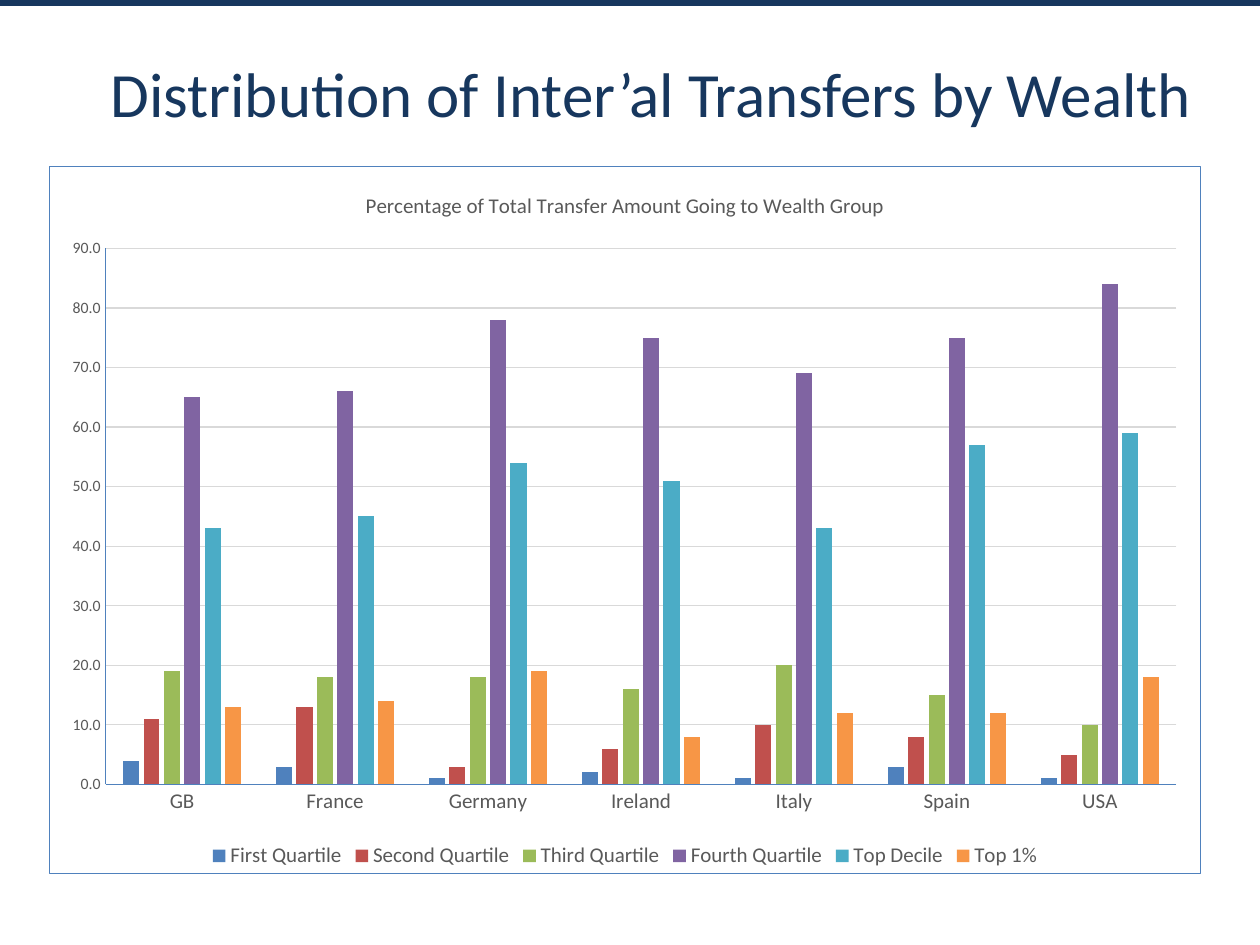
from dataclasses import dataclass

from lxml.etree import SubElement
from pptx import Presentation
from pptx.chart.axis import CategoryAxis, ValueAxis
from pptx.chart.chart import Chart
from pptx.chart.data import CategoryChartData
from pptx.dml.color import RGBColor
from pptx.dml.line import LineFormat
from pptx.enum.chart import XL_CHART_TYPE, XL_LEGEND_POSITION, XL_TICK_MARK
from pptx.enum.shapes import MSO_SHAPE
from pptx.enum.text import MSO_ANCHOR, PP_ALIGN
from pptx.oxml import parse_xml
from pptx.oxml.ns import nsdecls, qn
from pptx.slide import Slide
from pptx.text.text import Font
from pptx.util import Emu, Pt

PIXELS_PER_INCH = 126


@dataclass(frozen=True)
class Theme:
    font: str = "Calibri"
    navy: str = "17375E"
    blue: str = "4F81BD"
    white: str = "FFFFFF"
    gray: str = "595959"
    grid: str = "D9D9D9"
    title_size: int = 36
    label_size: int = 12
    chart_size: int = 10
    tick_size: int = 9
    line_width: float = 0.75


@dataclass(frozen=True)
class Area:
    left: int
    top: int
    width: int
    height: int

    def emu(self) -> tuple[Emu, ...]:
        return tuple(px(n) for n in (self.left, self.top, self.width, self.height))


@dataclass(frozen=True)
class WealthGroup:
    name: str
    color: str
    shares: tuple[int, ...]


THEME = Theme()
PAGE = Area(0, 0, 1260, 945)
TOP_BAND = Area(0, 0, 1260, 6)
TITLE = Area(98, 19, 1130, 147)
CHART = Area(49, 166, 1152, 708)
PLOT = Area(105, 248, 1072, 537)
COUNTRIES = ("GB", "France", "Germany", "Ireland", "Italy", "Spain", "USA")
WEALTH_GROUPS = (
    WealthGroup("First Quartile", "4F81BD", (4, 3, 1, 2, 1, 3, 1)),
    WealthGroup("Second Quartile", "C0504D", (11, 13, 3, 6, 10, 8, 5)),
    WealthGroup("Third Quartile", "9BBB59", (19, 18, 18, 16, 20, 15, 10)),
    WealthGroup("Fourth Quartile", "8064A2", (65, 66, 78, 75, 69, 75, 84)),
    WealthGroup("Top Decile", "4BACC6", (43, 45, 54, 51, 43, 57, 59)),
    WealthGroup("Top 1%", "F79646", (13, 14, 19, 8, 12, 12, 18)),
)


def px(length: int) -> Emu:
    return Emu(round(length * 914400 / PIXELS_PER_INCH))


def style_font(font: Font, size: int, color: str) -> None:
    font.name = THEME.font
    font.size = Pt(size)
    font.bold = False
    font.color.rgb = RGBColor.from_string(color)


def style_line(line: LineFormat, color: str) -> None:
    line.color.rgb = RGBColor.from_string(color)
    line.width = Pt(THEME.line_width)


def add_band(page: Slide) -> None:
    band = page.shapes.add_shape(MSO_SHAPE.RECTANGLE, *TOP_BAND.emu())
    band.shadow.inherit = False
    band.fill.solid()
    band.fill.fore_color.rgb = RGBColor.from_string(THEME.navy)
    band.line.fill.background()


def add_title(page: Slide, text: str) -> None:
    box = page.shapes.add_textbox(*TITLE.emu())
    box.text_frame.word_wrap = True
    box.text_frame.vertical_anchor = MSO_ANCHOR.MIDDLE
    para = box.text_frame.paragraphs[0]
    para.alignment = PP_ALIGN.LEFT
    span = para.add_run()
    span.text = text
    style_font(span.font, THEME.title_size, THEME.navy)


def style_axis(axis: CategoryAxis | ValueAxis, size: int) -> None:
    axis.major_tick_mark = XL_TICK_MARK.NONE
    axis.minor_tick_mark = XL_TICK_MARK.NONE
    style_font(axis.tick_labels.font, size, THEME.gray)
    style_line(axis.format.line, THEME.blue)


def frame_chart(chart: Chart) -> None:
    frame = parse_xml(
        f'<c:spPr {nsdecls("c", "a")}>'
        f'<a:solidFill><a:srgbClr val="{THEME.white}"/></a:solidFill>'
        f'<a:ln w="{Pt(THEME.line_width)}"><a:solidFill>'
        f'<a:srgbClr val="{THEME.blue}"/></a:solidFill></a:ln></c:spPr>'
    )
    chart.element.find(qn("c:chart")).addnext(frame)


def place_plot(chart: Chart) -> None:
    plot_area = chart.element.find(qn("c:chart")).find(qn("c:plotArea"))
    for old in plot_area.findall(qn("c:layout")):
        plot_area.remove(old)
    layout = parse_xml(f'<c:layout {nsdecls("c")}/>')
    manual = SubElement(layout, qn("c:manualLayout"))
    settings = {
        "layoutTarget": "inner",
        "xMode": "edge",
        "yMode": "edge",
        "x": round((PLOT.left - CHART.left) / CHART.width, 4),
        "y": round((PLOT.top - CHART.top) / CHART.height, 4),
        "w": round(PLOT.width / CHART.width, 4),
        "h": round(PLOT.height / CHART.height, 4),
    }
    for name, value in settings.items():
        SubElement(manual, qn(f"c:{name}")).set("val", str(value))
    plot_area.insert(0, layout)


def add_transfer_chart(page: Slide, title: str) -> None:
    data = CategoryChartData(number_format="0.0")
    data.categories = COUNTRIES
    for group in WEALTH_GROUPS:
        data.add_series(group.name, group.shares)
    chart = page.shapes.add_chart(
        XL_CHART_TYPE.COLUMN_CLUSTERED, *CHART.emu(), data
    ).chart
    style_font(chart.font, THEME.chart_size, "000000")

    chart.has_title = True
    span = chart.chart_title.text_frame.paragraphs[0].add_run()
    span.text = title
    style_font(span.font, THEME.label_size, THEME.gray)
    chart.chart_title.include_in_layout = False

    chart.has_legend = True
    chart.legend.position = XL_LEGEND_POSITION.BOTTOM
    chart.legend.include_in_layout = False
    style_font(chart.legend.font, THEME.label_size, THEME.gray)

    style_axis(chart.category_axis, THEME.label_size)
    values = chart.value_axis
    style_axis(values, THEME.tick_size)
    values.minimum_scale, values.maximum_scale, values.major_unit = 0, 90, 10
    values.tick_labels.number_format = "0.0"
    values.tick_labels.number_format_is_linked = False
    values.has_major_gridlines = True
    style_line(values.major_gridlines.format.line, THEME.grid)

    plot = chart.plots[0]
    plot.gap_width, plot.overlap = 219, -27
    plot.vary_by_categories = False
    for series, group in zip(plot.series, WEALTH_GROUPS):
        series.format.fill.solid()
        series.format.fill.fore_color.rgb = RGBColor.from_string(group.color)
        series.invert_if_negative = False
    frame_chart(chart)
    place_plot(chart)


def main() -> None:
    deck = Presentation()
    deck.slide_width, deck.slide_height = px(PAGE.width), px(PAGE.height)
    page = deck.slides.add_slide(deck.slide_layouts[6])
    add_band(page)
    add_title(page, "Distribution of Inter’al Transfers by Wealth")
    add_transfer_chart(page, "Percentage of Total Transfer Amount Going to Wealth Group")
    deck.save("out.pptx")


if __name__ == "__main__":
    main()
